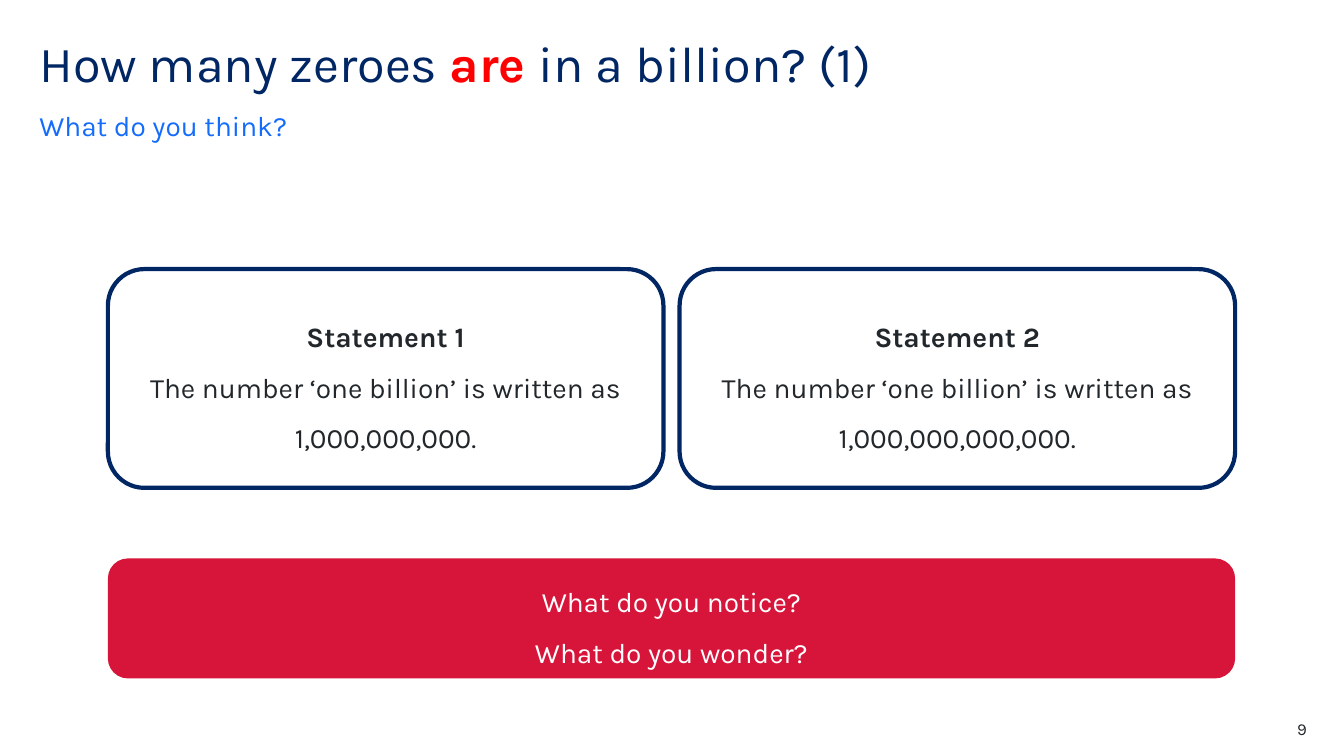
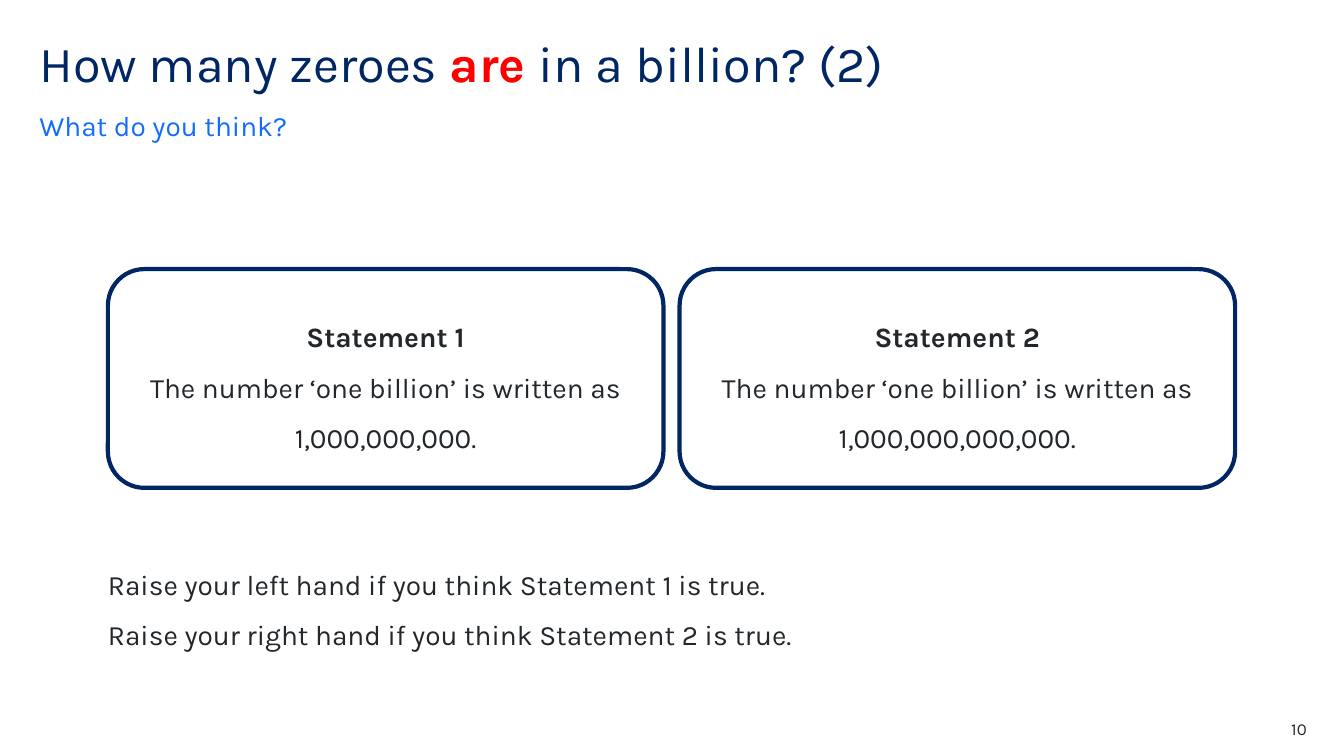
from pptx import Presentation
from pptx.dml.color import RGBColor
from pptx.enum.shapes import MSO_SHAPE as Shape
from pptx.enum.text import MSO_ANCHOR as Anchor, PP_ALIGN as Align
from pptx.util import Inches, Pt

# Content
TITLE_START, TITLE_STRESS = "How many zeroes ", "are "
SUBTITLE = "What do you think?"
STATEMENTS = [
    ("Statement 1", "The number ‘one billion’ is written as 1,000,000,000."),
    ("Statement 2", "The number ‘one billion’ is written as 1,000,000,000,000."),
]
SLIDES = [
    {"number": 9, "title_end": "in a billion? (1)",
     "banner": ["What do you notice?", "What do you wonder?"]},
    {"number": 10, "title_end": "in a billion? (2)",
     "instructions": ["Raise your left hand if you think Statement 1 is true.",
                      "Raise your right hand if you think Statement 2 is true."]},
]

# Shared style
FONT = "Karla"
COLORS = {"navy": "002664", "blue": "146CFD", "stress": "FF0000",
          "text": "22272B", "crimson": "D7153A", "white": "FFFFFF"}
MARGIN = 0.39
HEADING_WIDTH = 11.02
CONTENT_LEFT, CONTENT_WIDTH = 1.07, 11.18
CARD_TOP, CARD_HEIGHT, CARD_GAP = 2.67, 2.17, 0.16
CARD_WIDTH = (CONTENT_WIDTH - CARD_GAP) / len(STATEMENTS)


def color(name):
    return RGBColor.from_string(COLORS[name])


def set_frame(shape, inset, anchor):
    frame = shape.text_frame
    frame.word_wrap = True
    frame.vertical_anchor = anchor
    frame.margin_left = frame.margin_right = Inches(inset)
    frame.margin_top = frame.margin_bottom = Inches(inset)
    return frame


def write(frame, lines, color_name="text", size=20, align=Align.LEFT, spacing=1.0):
    """Write one paragraph per line and return the paragraphs."""
    for index, line in enumerate(lines):
        paragraph = frame.add_paragraph() if index else frame.paragraphs[0]
        paragraph.text = line
        paragraph.alignment = align
        paragraph.line_spacing = spacing
        paragraph.font.name = FONT
        paragraph.font.size = Pt(size)
        paragraph.font.color.rgb = color(color_name)
    return frame.paragraphs


def add_text(slide, box, lines, anchor=Anchor.TOP, **style):
    shape = slide.shapes.add_textbox(*map(Inches, box))
    return write(set_frame(shape, 0, anchor), lines, **style)


def add_panel(slide, box, lines, inset, fill=None, outline=None, **style):
    shape = slide.shapes.add_shape(Shape.ROUNDED_RECTANGLE, *map(Inches, box))
    shape.shadow.inherit = False
    if fill:
        shape.fill.solid()
        shape.fill.fore_color.rgb = color(fill)
    else:
        shape.fill.background()
    if outline:
        shape.line.color.rgb = color(outline)
        shape.line.width = Pt(3)
    else:
        shape.line.fill.background()
    frame = set_frame(shape, inset, Anchor.MIDDLE)
    return write(frame, lines, align=Align.CENTER, spacing=1.5, **style)


def add_heading(slide, title_end):
    title = add_text(slide, (MARGIN, MARGIN, HEADING_WIDTH, 0.6), [TITLE_START],
                     color_name="navy", size=36, spacing=0.9)[0]
    stress = title.add_run()
    stress.text = TITLE_STRESS
    stress.font.bold = True
    stress.font.color.rgb = color("stress")
    title.add_run().text = title_end
    add_text(slide, (MARGIN, 1.07, HEADING_WIDTH, 0.34), [SUBTITLE],
             anchor=Anchor.BOTTOM, color_name="blue")


def add_statements(slide):
    for column, statement in enumerate(STATEMENTS):
        left = CONTENT_LEFT + column * (CARD_WIDTH + CARD_GAP)
        paragraphs = add_panel(slide, (left, CARD_TOP, CARD_WIDTH, CARD_HEIGHT),
                               statement, inset=0.12, outline="navy")
        paragraphs[0].font.bold = True


def main():
    presentation = Presentation()
    presentation.slide_width, presentation.slide_height = Inches(13.33), Inches(7.5)
    for content in SLIDES:
        slide = presentation.slides.add_slide(presentation.slide_layouts[6])
        add_heading(slide, content["title_end"])
        add_statements(slide)
        # Prompt below the statements
        if "banner" in content:
            add_panel(slide, (CONTENT_LEFT, 5.54, CONTENT_WIDTH, 1.19),
                      content["banner"], inset=0.05, fill="crimson", color_name="white")
        else:
            add_text(slide, (CONTENT_LEFT, 5.46, CONTENT_WIDTH, 1.04),
                     content["instructions"], spacing=1.5)
        # Page number
        add_text(slide, (12.17, 7.13, 0.79, 0.2), [str(content["number"])],
                 size=12, align=Align.RIGHT)
    presentation.save("out.pptx")


if __name__ == "__main__":
    main()
